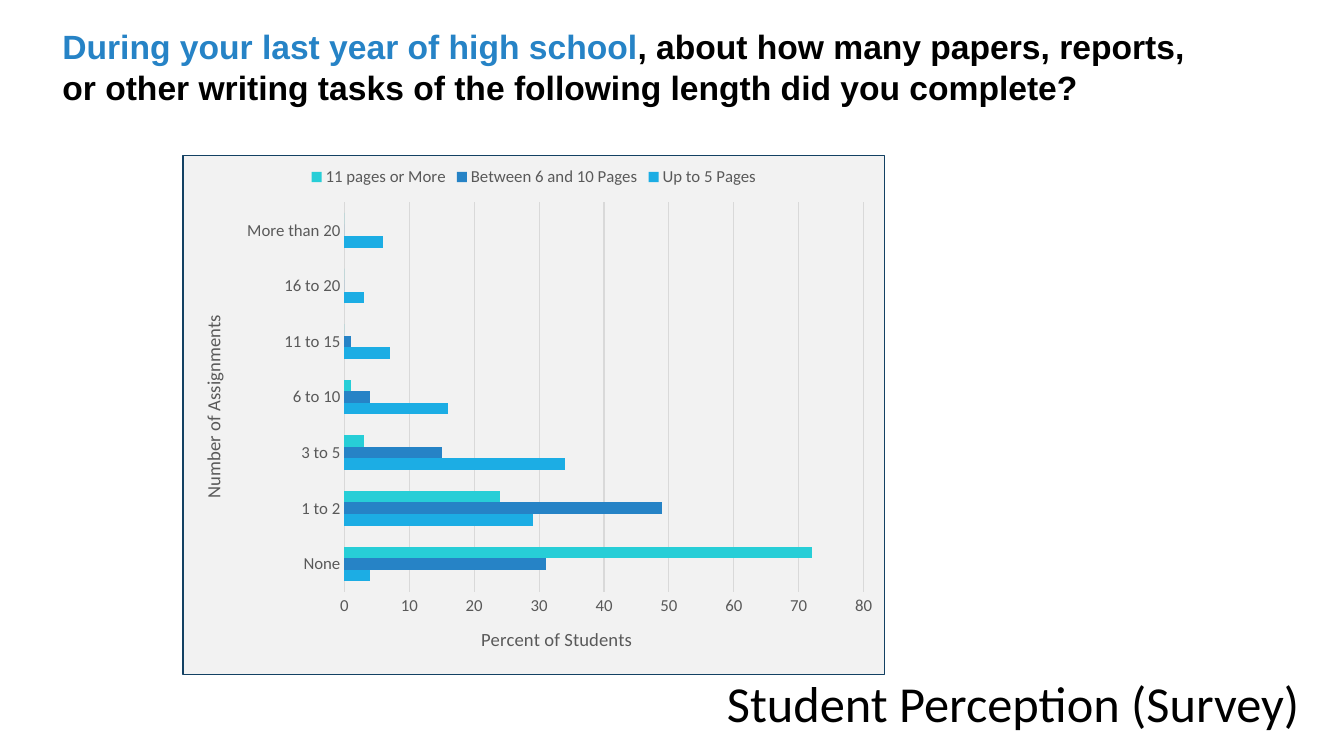
"""Build a slide with a clustered bar chart of writing tasks by length."""
from lxml import etree
from pptx import Presentation
from pptx.chart.data import CategoryChartData
from pptx.dml.color import RGBColor
from pptx.enum.chart import XL_CHART_TYPE, XL_LEGEND_POSITION, XL_TICK_MARK
from pptx.enum.text import MSO_ANCHOR, PP_ALIGN
from pptx.oxml import parse_xml
from pptx.oxml.ns import nsdecls, qn
from pptx.util import Inches, Pt

BAR_CLUSTERED = XL_CHART_TYPE.BAR_CLUSTERED
LEGEND_TOP = XL_LEGEND_POSITION.TOP
NO_TICK = XL_TICK_MARK.NONE
MIDDLE = MSO_ANCHOR.MIDDLE
RIGHT = PP_ALIGN.RIGHT

BLACK = RGBColor(0x00, 0x00, 0x00)
BLUE = RGBColor(0x26, 0x83, 0xC6)
SKY = RGBColor(0x1C, 0xAD, 0xE4)
TURQUOISE = RGBColor(0x27, 0xCE, 0xD7)
GRAY = RGBColor(0x59, 0x59, 0x59)
GRID_GRAY = RGBColor(0xD9, 0xD9, 0xD9)
PANEL_GRAY = RGBColor(0xF2, 0xF2, 0xF2)
NAVY = RGBColor(0x13, 0x41, 0x63)

ASSIGNMENT_COUNTS = ["None", "1 to 2", "3 to 5", "6 to 10", "11 to 15", "16 to 20", "More than 20"]
PAPER_LENGTHS = [
    ("Up to 5 Pages", SKY, [4, 29, 34, 16, 7, 3, 6]),
    ("Between 6 and 10 Pages", BLUE, [31, 49, 15, 4, 1, 0, 0]),
    ("11 pages or More", TURQUOISE, [72, 24, 3, 1, 0, 0, 0]),
]


def set_font(font, name, size, color, bold=False):
    """Set the typeface, size, colour and weight of a font."""
    font.name = name
    font.size = Pt(size)
    font.bold = bold
    font.color.rgb = color


def add_text(slide, box, runs, name, size, bold=False):
    """Add a wrapped one-paragraph text box from (text, colour) runs."""
    shape = slide.shapes.add_textbox(*map(Inches, box))
    shape.text_frame.word_wrap = True
    paragraph = shape.text_frame.paragraphs[0]
    for text, color in runs:
        run = paragraph.add_run()
        run.text = text
        set_font(run.font, name, size, color, bold)
    return shape.text_frame


def add_footer(slide):
    """Add the right-aligned section name at the bottom."""
    frame = add_text(slide, (6.67, 6.7, 6.27, 0.62),
                     [("Student Perception (Survey)", BLACK)], "Calibri", 36)
    frame.vertical_anchor = MIDDLE
    frame.margin_left = frame.margin_right = Inches(0.05)
    paragraph = frame.paragraphs[0]
    paragraph.alignment = RIGHT
    paragraph.line_spacing = 0.9
    paragraph.space_before = Pt(12)
    paragraph.space_after = Pt(2)


def place(element, index, target=None, **fractions):
    """Give a chart element a manual layout in fractions of the chart."""
    for old in element.findall(qn("c:layout")):
        element.remove(old)
    layout = parse_xml(f"<c:layout {nsdecls('c')}><c:manualLayout/></c:layout>")
    manual = layout[0]
    settings = {"layoutTarget": target} if target else {}
    settings.update(xMode="edge", yMode="edge", **fractions)
    for tag, value in settings.items():
        etree.SubElement(manual, qn(f"c:{tag}")).set("val", str(value))
    element.insert(index, layout)


def style_axis(axis, title, rotation, left, top):
    """Format an axis and put its title at a fixed place."""
    axis.major_tick_mark = axis.minor_tick_mark = NO_TICK
    set_font(axis.tick_labels.font, "Calibri", 12, GRAY)
    frame = axis.axis_title.text_frame
    run = frame.paragraphs[0].add_run()
    run.text = title
    set_font(run.font, "Calibri", 13.3, GRAY)
    element = axis.axis_title._element
    element.find(".//" + qn("a:bodyPr")).set("rot", str(rotation))
    place(element, 1, x=left, y=top)


def style_line(line, color):
    """Draw a thin line in one colour."""
    line.color.rgb = color
    line.width = Pt(0.75)


def fill_chart_area(chart):
    """Give the chart area its gray fill and navy border."""
    properties = parse_xml(
        f"<c:spPr {nsdecls('c', 'a')}>"
        f'<a:solidFill><a:srgbClr val="{PANEL_GRAY}"/></a:solidFill>'
        f'<a:ln w="{Pt(0.75)}"><a:solidFill><a:srgbClr val="{NAVY}"/></a:solidFill></a:ln>'
        "</c:spPr>")
    chart._chartSpace.find(qn("c:txPr")).addprevious(properties)


def add_bar_chart(slide):
    """Add the clustered bars of assignments by paper length."""
    data = CategoryChartData()
    data.categories = ASSIGNMENT_COUNTS
    for name, _, values in PAPER_LENGTHS:
        data.add_series(name, values)
    box = map(Inches, (1.81, 1.54, 6.97, 5.16))
    chart = slide.shapes.add_chart(BAR_CLUSTERED, *box, data).chart
    chart.has_title = False
    set_font(chart.font, "Calibri", 10, BLACK)
    fill_chart_area(chart)

    chart.has_legend = True
    chart.legend.position = LEGEND_TOP
    chart.legend.include_in_layout = False
    set_font(chart.legend.font, "Calibri", 12, GRAY)

    plot = chart.plots[0]
    plot.gap_width = 182
    plot.overlap = 0
    plot.vary_by_categories = False
    for series, (_, color, _) in zip(plot.series, PAPER_LENGTHS):
        series.format.fill.solid()
        series.format.fill.fore_color.rgb = color

    categories, percents = chart.category_axis, chart.value_axis
    style_axis(categories, "Number of Assignments", -5400000, 0.02, 0.3)
    style_line(categories.format.line, GRID_GRAY)
    style_axis(percents, "Percent of Students", 0, 0.42, 0.9)
    percents.format.line.fill.background()
    percents.minimum_scale, percents.maximum_scale, percents.major_unit = 0, 80, 10
    percents.has_major_gridlines = True
    style_line(percents.major_gridlines.format.line, GRID_GRAY)
    plot_area = chart._chartSpace.find(".//" + qn("c:plotArea"))
    place(plot_area, 0, "inner", x=0.23, y=0.09, w=0.74, h=0.75)


def main():
    """Build and save the slide."""
    presentation = Presentation()
    presentation.slide_width = Inches(13.33)
    presentation.slide_height = Inches(7.5)
    slide = presentation.slides.add_slide(presentation.slide_layouts[6])
    question = [
        ("During your last year of high school", BLUE),
        (", about how many papers, reports, or other writing tasks "
         "of the following length did you complete?", BLACK),
    ]
    add_text(slide, (0.52, 0.21, 11.39, 1.08), question, "Arial", 24, bold=True)
    add_bar_chart(slide)
    add_footer(slide)
    presentation.save("out.pptx")


if __name__ == "__main__":
    main()
